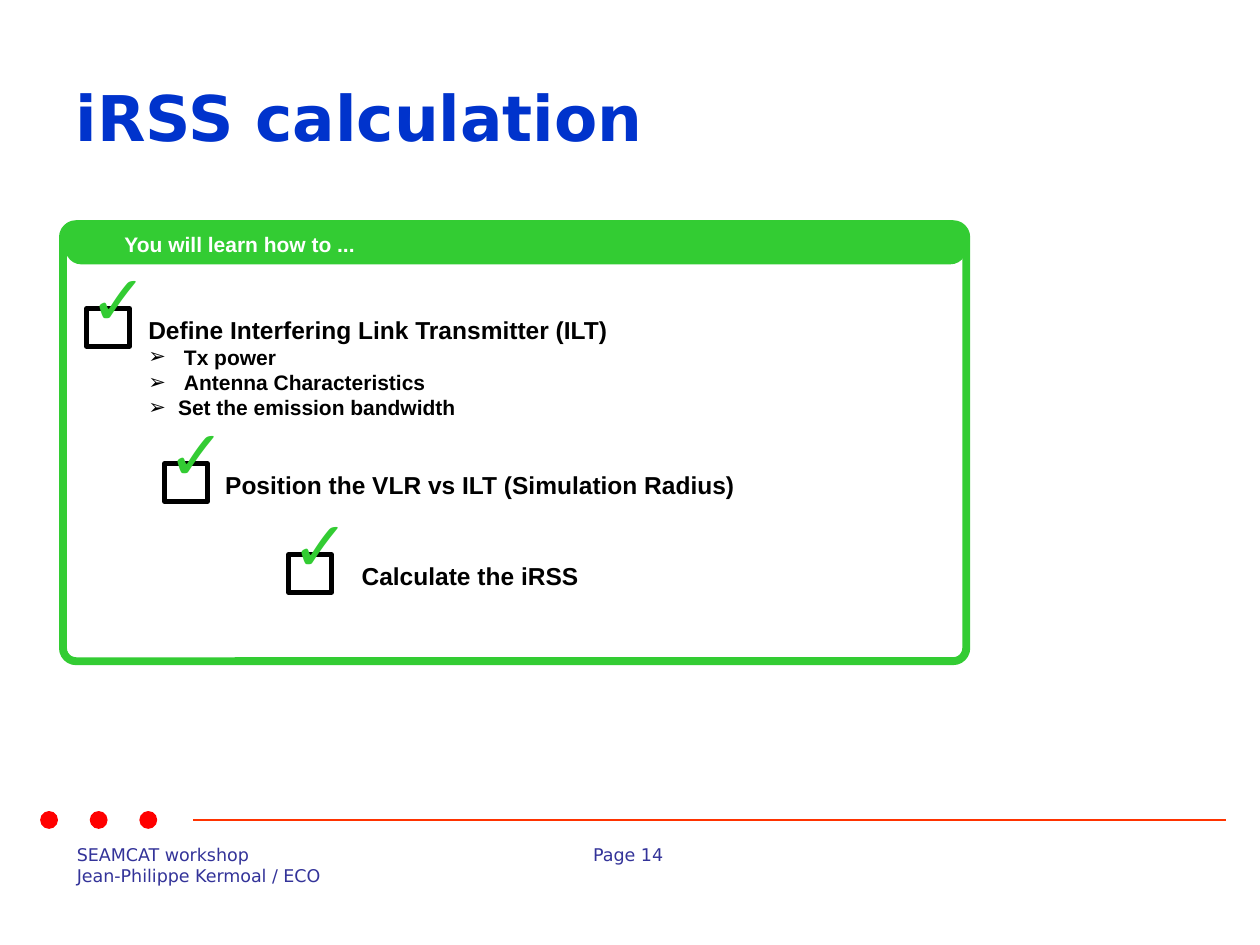
from dataclasses import dataclass
from lxml.etree import SubElement
from pptx import Presentation
from pptx.dml.color import RGBColor
from pptx.enum.shapes import MSO_CONNECTOR, MSO_SHAPE
from pptx.enum.text import MSO_ANCHOR, MSO_AUTO_SIZE, PP_ALIGN
from pptx.oxml.ns import qn
from pptx.util import Cm, Pt


@dataclass(frozen=True)
class Theme:
    heading_font: str = "DejaVu Sans"
    body_font: str = "Arial"
    title_blue: RGBColor = RGBColor(0x00, 0x33, 0xCC)
    footer_blue: RGBColor = RGBColor(0x33, 0x33, 0x99)
    green: RGBColor = RGBColor(0x33, 0xCC, 0x33)
    red: RGBColor = RGBColor(0xFF, 0x00, 0x00)
    rule_red: RGBColor = RGBColor(0xFF, 0x33, 0x00)
    black: RGBColor = RGBColor(0x00, 0x00, 0x00)
    white: RGBColor = RGBColor(0xFF, 0xFF, 0xFF)
    title_size: Pt = Pt(36)
    tick_size: Pt = Pt(40)
    step_size: Pt = Pt(14)
    detail_size: Pt = Pt(12)
    footer_size: Pt = Pt(10)


theme = Theme()
deck = Presentation()
deck.slide_width, deck.slide_height = Cm(25.4), Cm(19.05)
page = deck.slides.add_slide(deck.slide_layouts[5])


def style(para, font_name, size, color, bold=True):
    para.font.name = font_name
    para.font.size = size
    para.font.color.rgb = color
    para.font.bold = bold


def add_shape(kind, left, top, width, height, fill=None, line=None, weight=0):
    shape = page.shapes.add_shape(kind, Cm(left), Cm(top), Cm(width), Cm(height))
    shape.shadow.inherit = False
    if fill is None:
        shape.fill.background()
    else:
        shape.fill.solid()
        shape.fill.fore_color.rgb = fill
    if line is None:
        shape.line.fill.background()
    else:
        shape.line.color.rgb = line
        shape.line.width = Pt(weight)
    return shape


footers = [
    (1.3, 5.61, 1.09, ["SEAMCAT workshop", "Jean-Philippe Kermoal / ECO"]),
    (11.71, 2.08, 0.69, ["Page 14"]),
]
for left, width, height, lines in footers:
    box = page.shapes.add_textbox(Cm(left), Cm(16.89), Cm(width), Cm(height))
    box.text_frame.text = "\n".join(lines)
    for para in box.text_frame.paragraphs:
        style(para, theme.heading_font, theme.footer_size, theme.footer_blue, False)

rule = page.shapes.add_connector(
    MSO_CONNECTOR.STRAIGHT, Cm(3.9), Cm(16.53), Cm(24.71), Cm(16.53))
rule.line.color.rgb = theme.rule_red
rule.line.width = Pt(0.75)
SubElement(rule._element.spPr, qn("a:effectLst"))
for index in range(3):
    add_shape(MSO_SHAPE.OVAL, 0.81 + index, 16.35, 0.36, 0.36, theme.red)

title = page.shapes.title
title.left, title.top, title.width, title.height = Cm(1.27), Cm(0.76), Cm(22.86), Cm(3.18)
title.text_frame.text = "iRSS calculation"
title.text_frame.auto_size = MSO_AUTO_SIZE.NONE
title.text_frame.vertical_anchor = MSO_ANCHOR.MIDDLE
heading = title.text_frame.paragraphs[0]
heading.alignment = PP_ALIGN.LEFT
style(heading, theme.heading_font, theme.title_size, theme.title_blue)

frame = add_shape(MSO_SHAPE.ROUNDED_RECTANGLE, 1.27, 4.52, 18.21, 8.81,
                  line=theme.green, weight=4.5)
frame.adjustments[0] = 0.03
banner = add_shape(MSO_SHAPE.ROUNDED_RECTANGLE, 1.32, 4.47, 18.16, 0.86, theme.green)
banner.adjustments[0] = 0.37
box = page.shapes.add_textbox(Cm(2.26), Cm(4.55), Cm(12.6), Cm(0.76))
box.text_frame.word_wrap = True
box.text_frame.text = "You will learn how to ..."
style(box.text_frame.paragraphs[0], theme.body_font, theme.detail_size, theme.white)

steps = [
    (1.75, 6.22, 2.74, 10.49, "Define Interfering Link Transmitter (ILT)",
     [("Tx power", 0.72), ("Antenna Characteristics", 0.72),
      ("Set the emission bandwidth", 0.6)]),
    (3.32, 9.35, 4.29, 13.39, "Position the VLR vs ILT (Simulation Radius)", []),
    (5.82, 11.18, 7.04, 5.21, "Calculate the iRSS", []),
]
for left, top, text_left, text_width, step, details in steps:
    box = page.shapes.add_textbox(
        Cm(text_left), Cm(top), Cm(text_width), Cm(0.86 + 0.51 * len(details)))
    box.text_frame.word_wrap = True
    box.text_frame.text = step
    style(box.text_frame.paragraphs[0], theme.body_font, theme.step_size, theme.black)
    for detail, hanging in details:
        para = box.text_frame.add_paragraph()
        para.text = detail
        properties = para._p.get_or_add_pPr()
        properties.set("marL", str(Cm(hanging)))
        properties.set("indent", str(-Cm(hanging)))
        SubElement(properties, qn("a:buFont"), typeface=theme.body_font)
        SubElement(properties, qn("a:buChar"), char="➢")
        style(para, theme.body_font, theme.detail_size, theme.black)

    add_shape(MSO_SHAPE.RECTANGLE, left, top, 0.86, 0.76, line=theme.black, weight=3)
    tick = page.shapes.add_textbox(Cm(left - 0.19), Cm(top - 1.19), Cm(1.57), Cm(1.96))
    tick.text_frame.text = "✓"
    style(tick.text_frame.paragraphs[0], theme.body_font, theme.tick_size, theme.green)

deck.save("out.pptx")
